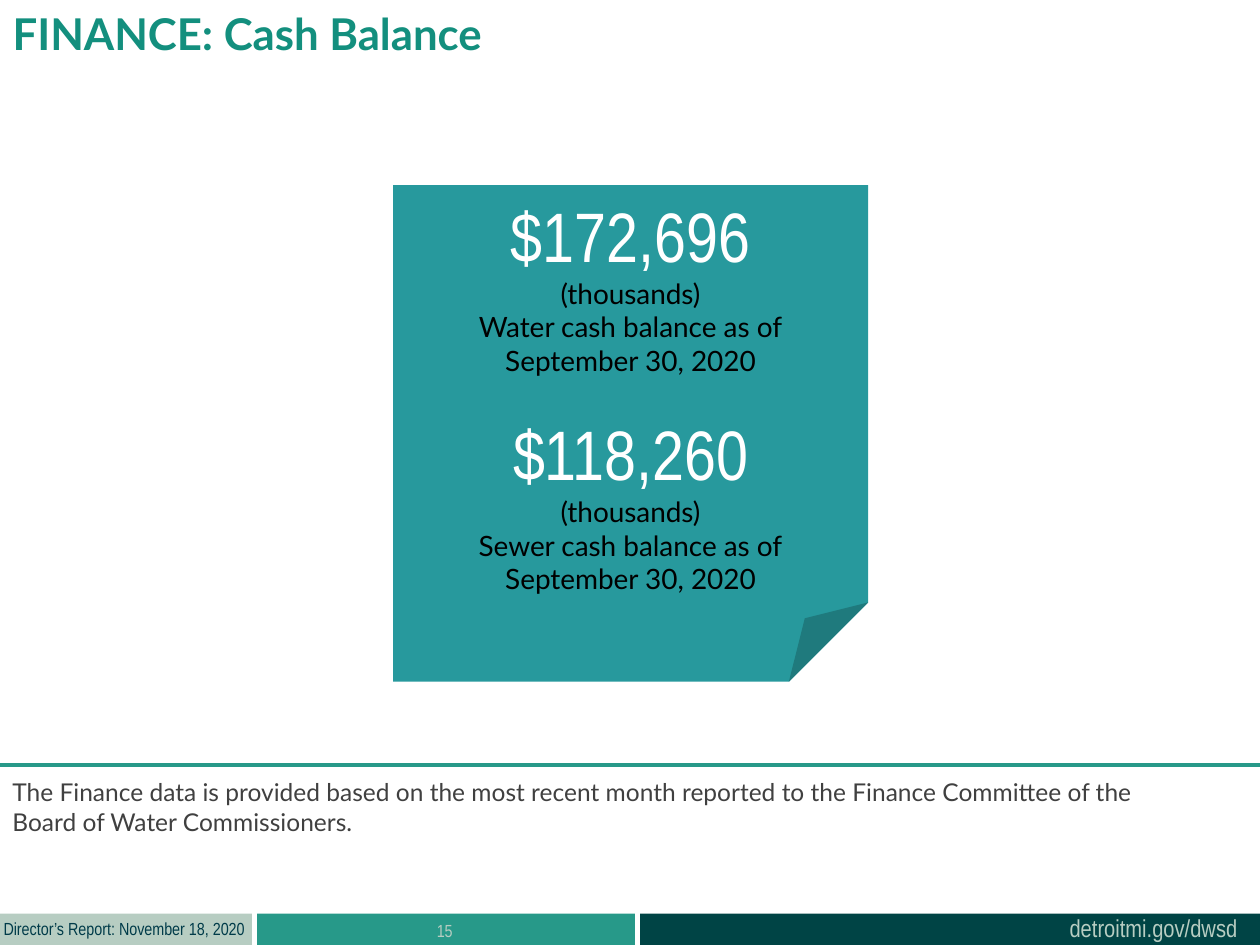
"""Build the cash balance slide of the finance report."""
from dataclasses import dataclass

from lxml import etree
from pptx import Presentation
from pptx.dml.color import RGBColor
from pptx.enum import shapes, text
from pptx.oxml.ns import qn
from pptx.util import Inches, Pt

COLORS = {
    "green": "279989", "title": "138F7E", "dark": "004445", "sage": "B7CDC2",
    "navy": "003B49", "note": "27999D", "white": "FFFFFF", "black": "000000",
    "gray": "404040",
}
LEFT, CENTER = text.PP_ALIGN.LEFT, text.PP_ALIGN.CENTER
TOP, MIDDLE = text.MSO_ANCHOR.TOP, text.MSO_ANCHOR.MIDDLE


@dataclass(frozen=True)
class Box:
    left: float
    top: float
    width: float
    height: float

    def emu(self) -> tuple:
        return tuple(Inches(v) for v in (self.left, self.top, self.width, self.height))


@dataclass(frozen=True)
class Style:
    font: str
    size: float
    color: str
    bold: bool = False
    align: text.PP_ALIGN = LEFT


@dataclass(frozen=True)
class Bar:
    box: Box
    color: str


@dataclass(frozen=True)
class Label:
    box: Box
    words: str
    style: Style
    wrap: bool = True


@dataclass(frozen=True)
class Balance:
    amount: str
    fund: str


AMOUNT = Style("Arial Narrow", 40, "white", align=CENTER)
DETAIL = Style("Lato", 16, "black", align=CENTER)
TITLE = Label(Box(0, 0, 7.59, 0.77), "FINANCE: Cash Balance",
              Style("Lato", 25, "title", bold=True))
NOTE = Box(3.12, 1.47, 3.77, 3.94)
RULE_Y = 6.07
BARS = [
    Bar(Box(2.04, 7.25, 3, 0.25), "green"),
    Bar(Box(5.08, 7.25, 5, 0.25), "dark"),
    Bar(Box(0, 7.25, 2, 0.25), "sage"),
]
LABELS = [
    Label(Box(8.39, 7.2, 1.55, 0.34), "detroitmi.gov/dwsd",
          Style("Arial Narrow", 14, "sage"), wrap=False),
    Label(Box(-0.07, 7.24, 2.13, 0.27), "Director’s Report: November 18, 2020",
          Style("Arial Narrow", 10, "navy"), wrap=False),
    Label(Box(2.03, 7.25, 3, 0.4), "15",
          Style("Arial Narrow", 10, "sage", align=CENTER)),
    Label(Box(0, 6.12, 10, 0.57),
          "The Finance data is provided based on the most recent month reported "
          "to the Finance Committee of the\vBoard of Water Commissioners.",
          Style("Lato", 14, "gray")),
]
BALANCES = [Balance("$172,696", "Water"), Balance("$118,260", "Sewer")]


def rgb(name: str) -> RGBColor:
    return RGBColor.from_string(COLORS[name])


def write(p, words: str, style: Style) -> None:
    p.text = words
    p.alignment = style.align
    for r in p.runs:
        r.font.name = style.font
        r.font.size = Pt(style.size)
        r.font.bold = style.bold
        r.font.color.rgb = rgb(style.color)


def add_filled(s, kind: shapes.MSO_SHAPE, box: Box, color: str):
    sp = s.shapes.add_shape(kind, *box.emu())
    sp.shadow.inherit = False
    sp.fill.solid()
    sp.fill.fore_color.rgb = rgb(color)
    sp.line.fill.background()
    return sp


def fill_label(sp, label: Label) -> None:
    tf = sp.text_frame
    tf.auto_size = text.MSO_AUTO_SIZE.NONE
    tf.word_wrap = label.wrap
    tf.vertical_anchor = TOP
    write(tf.paragraphs[0], label.words, label.style)


def add_title(s, label: Label) -> None:
    sp = s.shapes.title
    sp.left, sp.top, sp.width, sp.height = label.box.emu()
    fill_label(sp, label)


def add_rule(s, y: float) -> None:
    line = s.shapes.add_connector(shapes.MSO_CONNECTOR.STRAIGHT,
                                  Inches(10), Inches(y), Inches(0), Inches(y))
    line.line.color.rgb = rgb("green")
    line.line.width = Pt(2.25)
    etree.SubElement(line._element.spPr, qn("a:effectLst"))


def add_balances(s, box: Box, balances: list[Balance]) -> None:
    tf = add_filled(s, shapes.MSO_SHAPE.FOLDED_CORNER, box, "note").text_frame
    tf.word_wrap = True
    tf.vertical_anchor = MIDDLE
    for i, balance in enumerate(balances):
        p = tf.add_paragraph() if i else tf.paragraphs[0]
        write(p, balance.amount, AMOUNT)
        if i:
            p.space_before = Pt(19.2)
        for words in ("(thousands)",
                      f"{balance.fund} cash balance as of\vSeptember 30, 2020"):
            write(tf.add_paragraph(), words, DETAIL)


def main() -> None:
    prs = Presentation()
    prs.slide_width, prs.slide_height = Inches(10), Inches(7.5)
    s = prs.slides.add_slide(prs.slide_layouts[5])
    for bar in BARS:
        add_filled(s, shapes.MSO_SHAPE.RECTANGLE, bar.box, bar.color)
    for label in LABELS:
        fill_label(s.shapes.add_textbox(*label.box.emu()), label)
    add_title(s, TITLE)
    add_rule(s, RULE_Y)
    add_balances(s, NOTE, BALANCES)
    prs.save("out.pptx")


if __name__ == "__main__":
    main()
